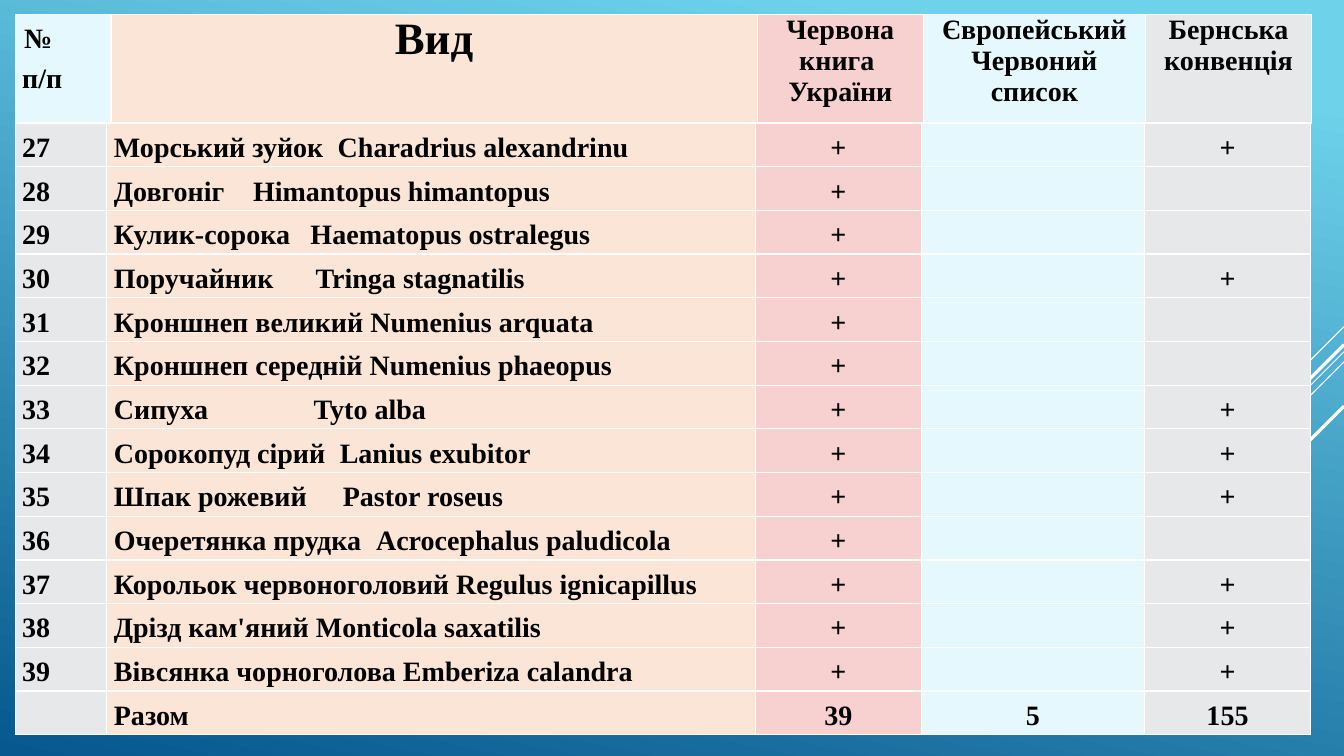
from lxml import etree
from pptx import Presentation
from pptx.dml.color import RGBColor
from pptx.enum import shapes, text
from pptx.oxml import ns
from pptx.util import Inches, Pt

FONT = "Times New Roman"
WHITE = "FFFFFF"
ICE, PEACH, PINK, GREY = "E4F8FD", "FAE5D7", "F7D0D0", "E7E8EA"
HEADER_FILLS = [ICE, PEACH, PINK, ICE, GREY]
SPECIES_FILLS = [GREY, PEACH, PINK, ICE, GREY]
HEADERS = ["№\nп/п", "Вид", "Червона книга \nУкраїни",
           "Європейський\nЧервоний\nсписок", "Бернська\nконвенція"]
FIRST_NUMBER = 27
SPECIES = [
    ("Морський зуйок", "Charadrius alexandrinu", 2.22, "+"),
    ("Довгоніг", "Himantopus himantopus", 1.38, ""),
    ("Кулик-сорока", "Haematopus ostralegus", 1.95, ""),
    ("Поручайник", "Tringa stagnatilis", 2.0, "+"),
    ("Кроншнеп великий", "Numenius arquata", None, ""),
    ("Кроншнеп середнiй", "Numenius phaeopus", None, ""),
    ("Сипуха", "Tyto alba", 1.98, "+"),
    ("Сорокопуд сiрий", "Lanius exubitor", 2.24, "+"),
    ("Шпак рожевий", "Pastor roseus", 2.27, "+"),
    ("Очеретянка прудка", "Acrocephalus paludicola", 2.6, ""),
    ("Корольок червоноголовий", "Regulus ignicapillus", None, "+"),
    ("Дрiзд кам'яний", "Monticola saxatilis", None, "+"),
    ("Вівсянка чорноголова", "Emberiza calandra", None, "+"),
]
TOTALS = ["", "Разом", "39", "5", "155"]
STREAKS = [(3.24, 1, 0.75), (3.49, 3.26, 0.75), (3.59, 2.07, 0.75),
           (3.42, 1.91, 2.25), (4.03, 1.39, 2.25)]


def color(value):
    return RGBColor.from_string(value)


def add_child(parent, tag, **attributes):
    return etree.SubElement(parent, ns.qn(tag), attributes)


def paint_background(page):
    fill = page.background.fill
    fill.gradient()
    fill.gradient_angle = 258
    for stop, position, value in zip(fill.gradient_stops, (0.1, 1), ("6ED2EB", "06588E")):
        stop.position = position
        stop.color.rgb = color(value)


def add_streak(page, top, run, weight):
    right = 13.33
    streak = page.shapes.add_connector(
        shapes.MSO_CONNECTOR.STRAIGHT, Inches(right), Inches(top),
        Inches(right - run), Inches(top + run))
    streak.line.color.rgb = color(WHITE)
    streak.line.width = Pt(weight)
    add_child(streak._element.spPr, "a:effectLst")


def add_borders(cell):
    properties = cell._tc.get_or_add_tcPr()
    for side in "LRTB":
        border = add_child(properties, f"a:ln{side}", w=str(Pt(1)))
        add_child(add_child(border, "a:solidFill"), "a:srgbClr", val=WHITE)


def add_tab_stop(para, position):
    stops = add_child(para._p.get_or_add_pPr(), "a:tabLst")
    add_child(stops, "a:tab", pos=str(Inches(position)), algn="l")


def fill_cell(cell, content, fill, size=20, centred=False, spacing=1.0, tab=None):
    add_borders(cell)
    cell.fill.solid()
    cell.fill.fore_color.rgb = color(fill)
    cell.margin_left = cell.margin_right = Inches(0.07)
    cell.margin_top = cell.margin_bottom = 0
    cell.text_frame.text = content
    for para in cell.text_frame.paragraphs:
        para.line_spacing = spacing
        if centred:
            para.alignment = text.PP_ALIGN.CENTER
        if tab:
            add_tab_stop(para, tab)
        for span in para.runs:
            span.font.name = FONT
            span.font.size = Pt(size)
            span.font.bold = True
            span.font.color.rgb = color("000000")


def add_grid(page, top, height, widths, row_count):
    frame = page.shapes.add_table(row_count, len(widths), Inches(0.15), Inches(top),
                                  Inches(12.85), Inches(height))
    table = frame.table
    table.first_row = table.horz_banding = False
    for column, width in zip(table.columns, widths):
        column.width = Inches(width)
    for row in table.rows:
        row.height = Inches(height / row_count)
    return table


def add_header(page):
    table = add_grid(page, 0.14, 1.08, [0.95, 6.41, 1.65, 2.2, 1.65], 1)
    for index, (title, fill) in enumerate(zip(HEADERS, HEADER_FILLS)):
        fill_cell(table.cell(0, index), title, fill, size=32 if index == 1 else 20,
                  centred=index > 0, spacing=1.0 if index else 1.3)
    number_sign = table.cell(0, 0).text_frame.paragraphs[0]
    number_sign._p.get_or_add_pPr().set("marL", str(Inches(0.02)))


def add_species(page):
    rows = []
    for number, (name, latin, tab, bern) in enumerate(SPECIES, FIRST_NUMBER):
        gap = "\t" if tab else " "
        rows.append(([str(number), name + gap + latin, "+", "", bern], tab))
    rows.append((TOTALS, None))
    table = add_grid(page, 1.22, 6.07, [0.91, 6.43, 1.65, 2.21, 1.65], len(rows))
    for row_index, (values, tab) in enumerate(rows):
        for index, (value, fill) in enumerate(zip(values, SPECIES_FILLS)):
            fill_cell(table.cell(row_index, index), value, fill, centred=index > 1,
                      spacing=1.3, tab=tab if index == 1 else None)


def main():
    deck = Presentation()
    deck.slide_width, deck.slide_height = Inches(13.33), Inches(7.5)
    page = deck.slides.add_slide(deck.slide_layouts[6])
    paint_background(page)
    for streak in STREAKS:
        add_streak(page, *streak)
    add_header(page)
    add_species(page)
    deck.save("out.pptx")


if __name__ == "__main__":
    main()
